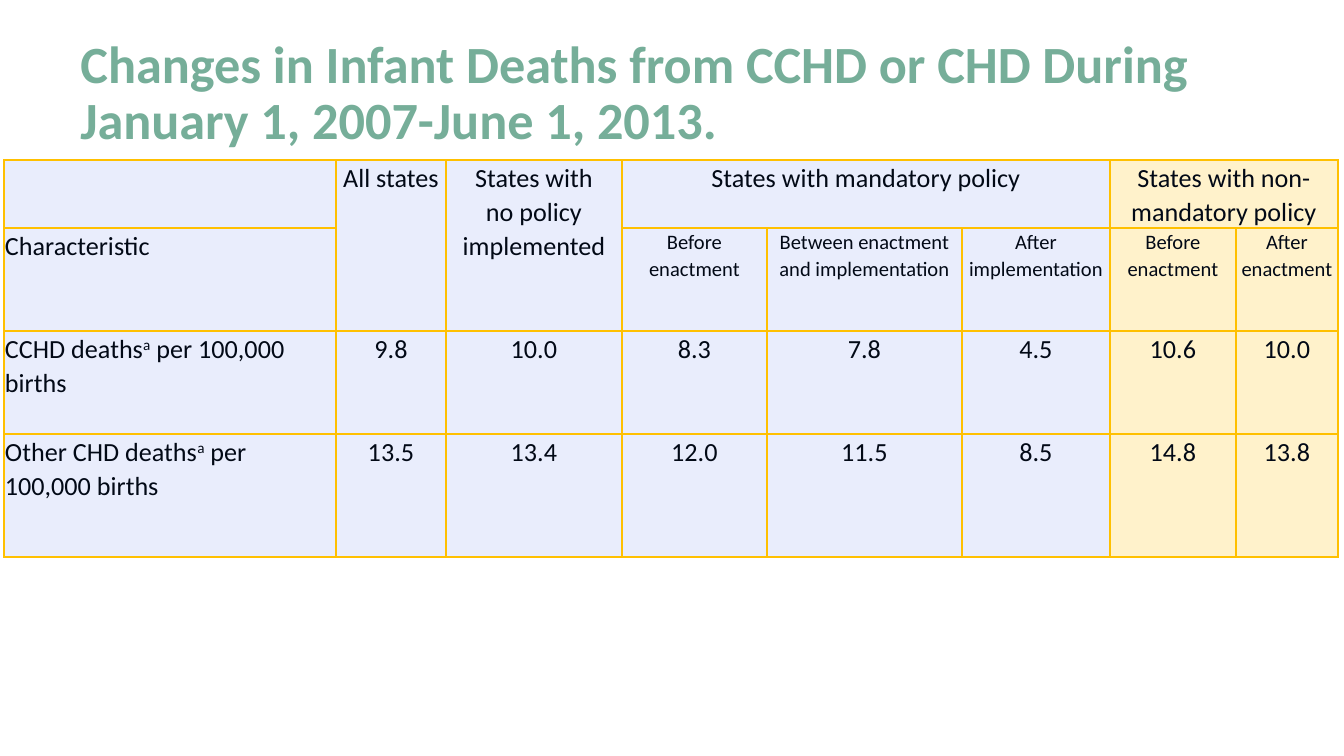
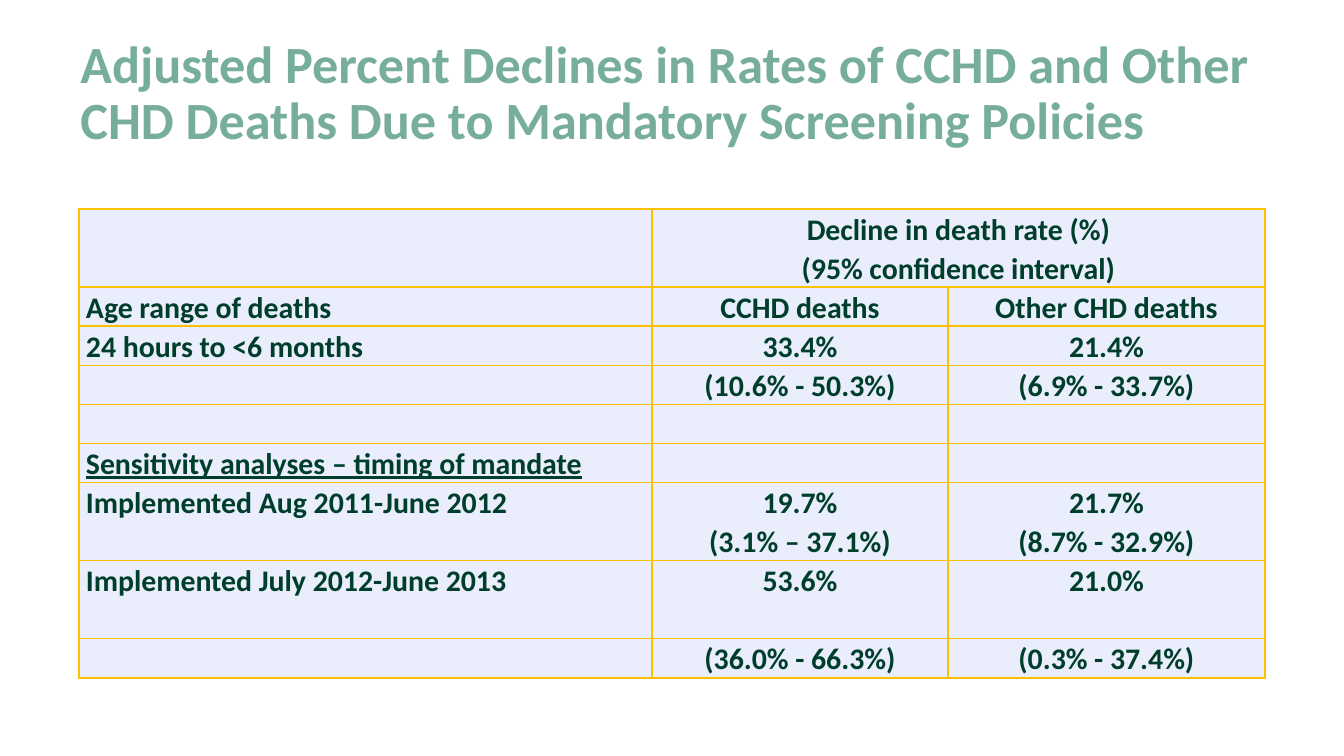
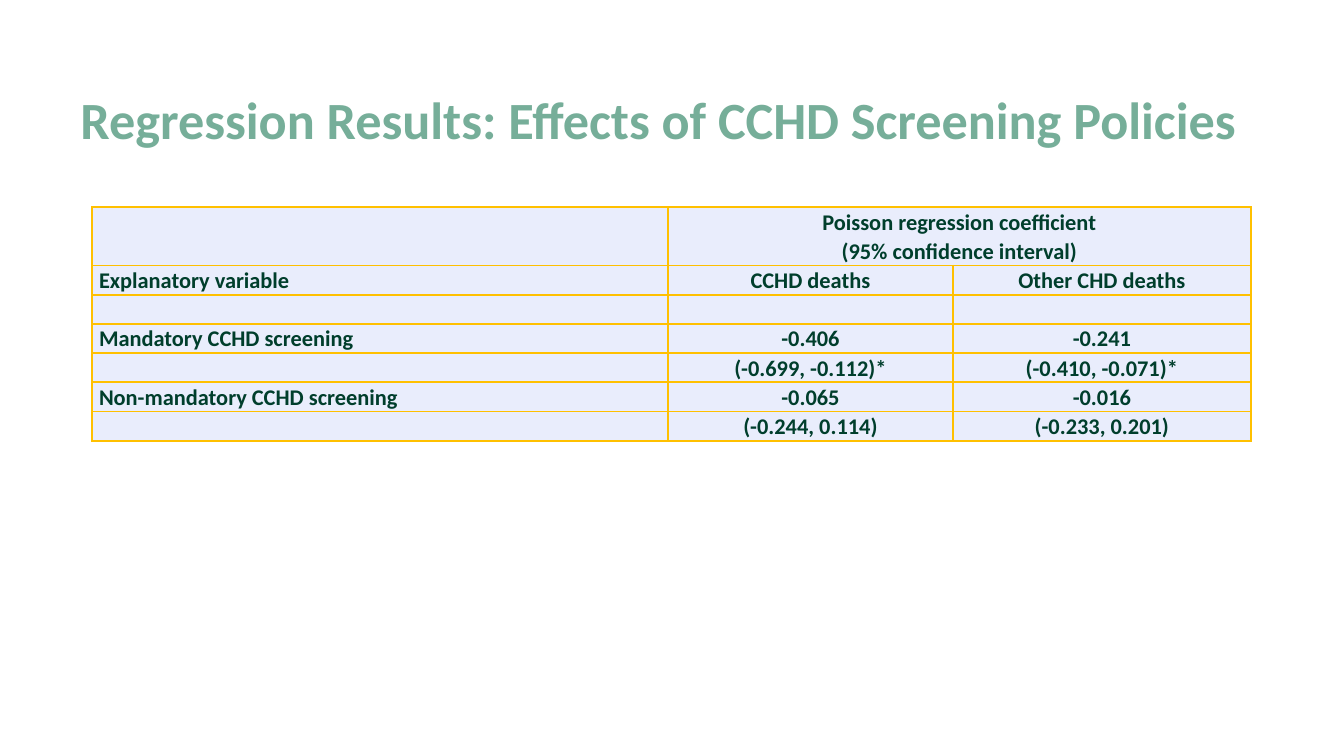
from dataclasses import dataclass

from lxml.etree import SubElement
from pptx import Presentation
from pptx.dml.color import RGBColor
from pptx.enum.text import MSO_ANCHOR, MSO_AUTO_SIZE, PP_ALIGN
from pptx.oxml.ns import qn
from pptx.util import Emu, Pt


@dataclass(frozen=True)
class Theme:
    font: str = "Calibri"
    title: str = "76AE99"
    ink: str = "020916"
    green: str = "003E2C"
    panel: str = "E9EDFC"
    highlight: str = "FFE699"
    border: str = "FFC000"
    title_size: int = 28
    title_leading: int = 30
    rate_size: int = 14
    stage_size: int = 11
    decline_size: int = 16
    regression_size: int = 12
    border_width: int = 1
    cell_leading: float = 1.07


@dataclass(frozen=True)
class TableStyle:
    size: int
    color: str
    bold: bool
    inset: int


THEME = Theme()
PAGE = (1344, 756)
TITLE_BOX = (67, 31, 1210, 126)
RATE_STYLE = TableStyle(THEME.rate_size, THEME.ink, False, 1)
DECLINE_STYLE = TableStyle(THEME.decline_size, THEME.green, True, 7)
REGRESSION_STYLE = TableStyle(THEME.regression_size, THEME.green, True, 7)


def px(length):
    return Emu(round(length * 9144000 / PAGE[0]))


def set_font(font, size, color, bold):
    font.name = THEME.font
    font.size = Pt(size)
    font.bold = bold
    font.color.rgb = RGBColor.from_string(color)


def add_page(deck, title):
    page = deck.slides.add_slide(deck.slide_layouts.get_by_name("Title Only"))
    box = page.shapes.title
    box.left, box.top, box.width, box.height = map(px, TITLE_BOX)
    frame = box.text_frame
    frame.text = title
    frame.word_wrap = True
    frame.auto_size = MSO_AUTO_SIZE.NONE
    frame.vertical_anchor = MSO_ANCHOR.BOTTOM
    paragraph = frame.paragraphs[0]
    paragraph.alignment = PP_ALIGN.LEFT
    paragraph.line_spacing = Pt(THEME.title_leading)
    set_font(paragraph.font, THEME.title_size, THEME.title, True)
    return page


def add_borders(cell):
    properties = cell._tc.get_or_add_tcPr()
    for side in ("lnL", "lnR", "lnT", "lnB"):
        line = SubElement(properties, qn(f"a:{side}"), w=str(Pt(THEME.border_width)))
        fill = SubElement(line, qn("a:solidFill"))
        SubElement(fill, qn("a:srgbClr"), val=THEME.border)


def fill_cell(cell, color, opacity=100):
    cell.fill.solid()
    cell.fill.fore_color.rgb = RGBColor.from_string(color)
    if opacity < 100:
        shade = cell._tc.tcPr.find(f"{qn('a:solidFill')}/{qn('a:srgbClr')}")
        SubElement(shade, qn("a:alpha"), val=str(opacity * 1000))


def write_cell(cell, text, style, size, alignment):
    cell.margin_left = cell.margin_right = px(style.inset)
    cell.margin_top = cell.margin_bottom = 0
    frame = cell.text_frame
    for index, line in enumerate(text.split("\n")):
        paragraph = frame.paragraphs[0] if index == 0 else frame.add_paragraph()
        paragraph.alignment = alignment
        paragraph.line_spacing = THEME.cell_leading
        set_font(paragraph.font, size, style.color, style.bold)
        if not line:
            SubElement(paragraph._p, qn("a:endParaRPr"), sz=str(size * 100))
            continue
        for part, span_text in enumerate(line.split("^")):
            span = paragraph.add_run()
            span.text = span_text
            if part % 2:
                span._r.get_or_add_rPr().set("baseline", "30000")


def add_grid(page, origin, columns, heights, rows, spans, style, sizes=None):
    left, top = origin
    table = page.shapes.add_table(
        len(rows), len(columns), px(left), px(top), px(sum(columns)), px(sum(heights))
    ).table
    table.first_row = table.horz_banding = False
    for column, width in zip(table.columns, columns):
        column.width = px(width)
    for row, height in zip(table.rows, heights):
        row.height = px(height)
    for row_index, texts in enumerate(rows):
        for column_index, text in enumerate(texts):
            cell = table.cell(row_index, column_index)
            size = (sizes or {}).get((row_index, column_index), style.size)
            alignment = PP_ALIGN.CENTER if column_index else PP_ALIGN.LEFT
            write_cell(cell, text, style, size, alignment)
            add_borders(cell)
            fill_cell(cell, THEME.panel)
    for first, last in spans:
        table.cell(*first).merge(table.cell(*last))
    return table


def add_death_rates(deck):
    page = add_page(
        deck,
        "Changes in Infant Deaths from CCHD or CHD During January 1, 2007-June 1, 2013.",
    )
    rows = [
        ["", "All states", "States with\nno policy implemented",
         "States with mandatory policy", "", "",
         "States with non-mandatory policy", ""],
        ["Characteristic", "", "", "Before enactment",
         "Between enactment and implementation", "After implementation",
         "Before enactment", "After enactment"],
        ["CCHD deaths^a^ per 100,000 births",
         "9.8", "10.0", "8.3", "7.8", "4.5", "10.6", "10.0"],
        ["Other CHD deaths^a^ per 100,000 births",
         "13.5", "13.4", "12.0", "11.5", "8.5", "14.8", "13.8"],
    ]
    table = add_grid(
        page, (4, 160), [332, 110, 176, 145, 195, 148, 126, 102],
        [68, 103, 103, 123], rows,
        [((0, 1), (1, 1)), ((0, 2), (1, 2)), ((0, 3), (0, 5)), ((0, 6), (0, 7))],
        RATE_STYLE, {(1, column): THEME.stage_size for column in range(3, 8)},
    )
    for row in range(len(rows)):
        for column in (6, 7):
            fill_cell(table.cell(row, column), THEME.highlight, 50)


def add_declines(deck):
    page = add_page(
        deck,
        "Adjusted Percent Declines in Rates of CCHD and Other CHD Deaths "
        "Due to Mandatory Screening Policies",
    )
    rows = [
        ["", "Decline in death rate (%)\n(95% confidence interval)", ""],
        ["Age range of deaths", "CCHD deaths", "Other CHD deaths"],
        ["24 hours to <6 months", "33.4%", "21.4%"],
        ["", "(10.6% - 50.3%)", "(6.9% - 33.7%)"],
        ["", "", ""],
        ["Sensitivity analyses – timing of mandate", "", ""],
        ["Implemented Aug 2011-June 2012",
         "19.7%\n(3.1% – 37.1%)", "21.7%\n(8.7% - 32.9%)"],
        ["Implemented July 2012-June 2013", "53.6%", "21.0%"],
        ["", "(36.0% - 66.3%)", "(0.3% - 37.4%)"],
    ]
    line = 39
    heights = [line * (2 if row in (0, 6, 7) else 1) for row in range(len(rows))]
    table = add_grid(
        page, (79, 209), [573, 296, 317], heights, rows,
        [((0, 1), (0, 2))], DECLINE_STYLE,
    )
    heading = table.cell(5, 0).text_frame.paragraphs[0]
    heading.runs[0].font.underline = True


def add_regression(deck):
    page = add_page(deck, "Regression Results: Effects of CCHD Screening Policies")
    rows = [
        ["", "Poisson regression coefficient\n(95% confidence interval)", ""],
        ["Explanatory variable", "CCHD deaths", "Other CHD deaths"],
        ["", "", ""],
        ["Mandatory CCHD screening", "-0.406", "-0.241"],
        ["", "(-0.699, -0.112)*", "(-0.410, -0.071)*"],
        ["Non-mandatory CCHD screening", "-0.065", "-0.016"],
        ["", "(-0.244, 0.114)", "(-0.233, 0.201)"],
    ]
    line = 29
    heights = [line * 2] + [line] * (len(rows) - 1)
    add_grid(
        page, (92, 207), [576, 285, 298], heights, rows,
        [((0, 1), (0, 2))], REGRESSION_STYLE,
    )


def main():
    deck = Presentation()
    deck.slide_width, deck.slide_height = map(px, PAGE)
    add_death_rates(deck)
    add_declines(deck)
    add_regression(deck)
    deck.save("out.pptx")


if __name__ == "__main__":
    main()
